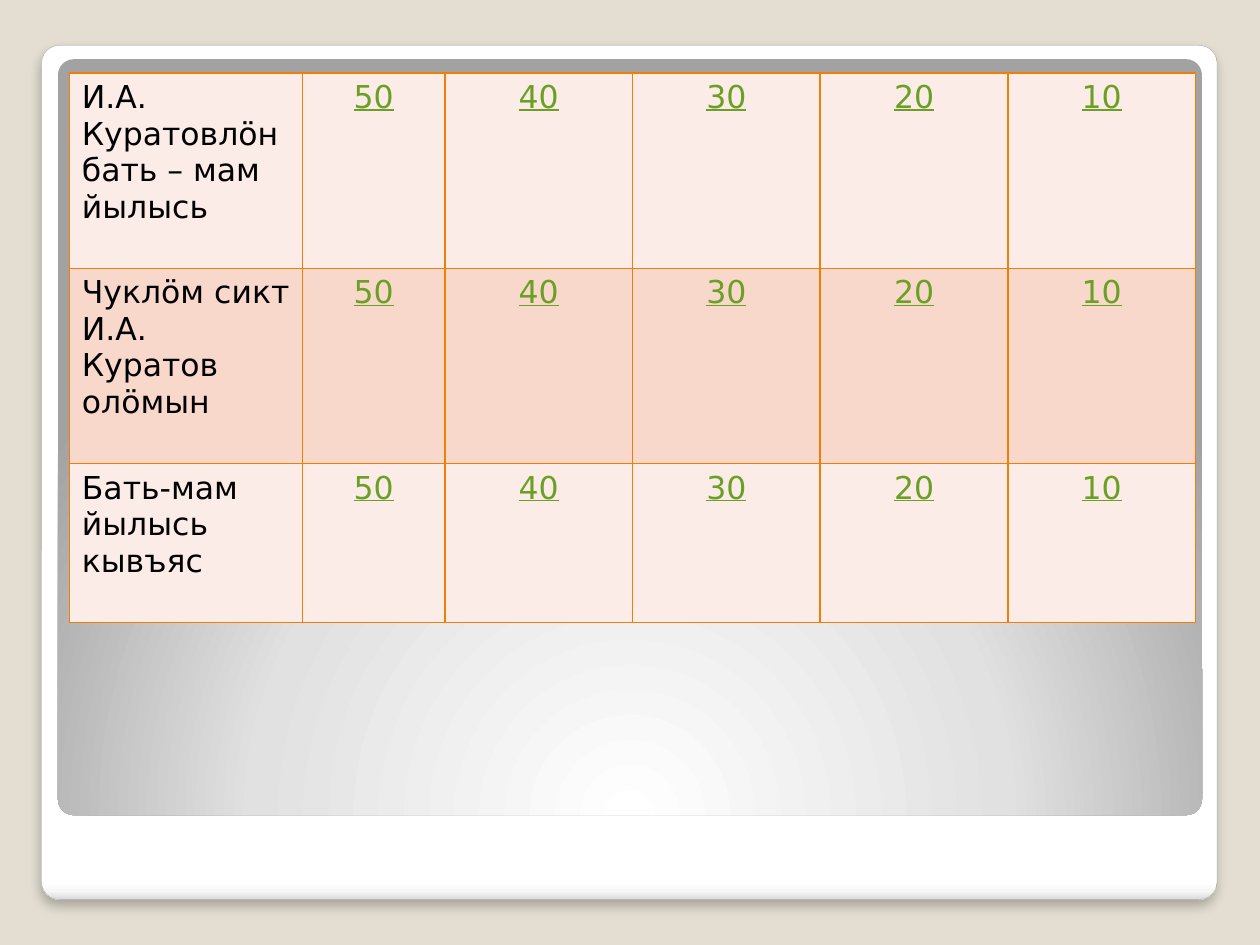
from lxml import etree
from pptx import Presentation
from pptx.dml.color import RGBColor
from pptx.enum.shapes import MSO_SHAPE
from pptx.enum.text import PP_ALIGN
from pptx.oxml import parse_xml
from pptx.oxml.ns import nsdecls, qn
from pptx.util import Inches, Pt

ROUNDED = MSO_SHAPE.ROUNDED_RECTANGLE
LEFT, CENTER = PP_ALIGN.LEFT, PP_ALIGN.CENTER

# Content
TOPICS = [
    "И.А. Куратовлöн бать – мам йылысь",
    "Чуклöм сикт И.А. Куратов олöмын",
    "Бать-мам йылысь кывъяс",
]
POINTS = ["50", "40", "30", "20", "10"]

# Look
FONT, FONT_SIZE = "DejaVu Sans", Pt(18)
SAND = RGBColor(0xE3, 0xDE, 0xD1)
EDGE_GREY = RGBColor(0xA4, 0xA4, 0xA4)
BLACK = RGBColor(0, 0, 0)
GREEN = RGBColor(0x6B, 0x9F, 0x25)
ORANGE = RGBColor(0xF0, 0x7F, 0x09)
BANDS = [RGBColor(0xFC, 0xEC, 0xE7), RGBColor(0xF9, 0xD8, 0xCC)]
FRAME_STOPS = [(0, "FFFFFF"), (98, "FFFFFF"), (99, "F7F7F7"), (100, "DADADA")]
PANEL_STOPS = [(0, "FFFFFF"), (55, "E1E1E1"), (100, "A2A2A2")]
DOWNWARD = '<a:lin ang="5400000" scaled="0"/>'
FROM_BELOW = ('<a:path path="circle"><a:fillToRect l="50000" t="175000" '
              'r="50000" b="-75000"/></a:path>')

# Grid, in inches
TABLE_LEFT, TABLE_TOP = 0.55, 0.58
COLUMN_WIDTHS = [1.85, 1.13] + [1.49] * 4
ROW_HEIGHTS = [1.55, 1.55, 1.26]


def add_backdrop(slide, box, stops, direction):
    """Rounded rectangle filled with a gradient."""
    backdrop = slide.shapes.add_shape(ROUNDED, *map(Inches, box))
    backdrop.adjustments[0] = 0.021
    backdrop.shadow.inherit = False
    backdrop.line.fill.background()
    stop_xml = "".join(
        f'<a:gs pos="{share * 1000}"><a:srgbClr val="{color}"/></a:gs>'
        for share, color in stops)
    gradient = parse_xml(f'<a:gradFill {nsdecls("a")} rotWithShape="1">'
                         f'<a:gsLst>{stop_xml}</a:gsLst>{direction}</a:gradFill>')
    backdrop._element.spPr.find(qn("a:prstGeom")).addnext(gradient)
    return backdrop


def add_soft_shadow(shape):
    effects = shape._element.spPr.find(qn("a:effectLst"))
    effects.append(parse_xml(
        f'<a:outerShdw {nsdecls("a")} blurRad="{Pt(6)}" dist="{Pt(4)}" '
        'dir="5400000" rotWithShape="0"><a:srgbClr val="000000">'
        '<a:alpha val="25000"/></a:srgbClr></a:outerShdw>'))


def set_borders(cell):
    properties = cell._tc.get_or_add_tcPr()
    for position, side in enumerate(("a:lnL", "a:lnR", "a:lnT", "a:lnB")):
        border = etree.Element(qn(side), w=str(Pt(1)))
        fill = etree.SubElement(border, qn("a:solidFill"))
        etree.SubElement(fill, qn("a:srgbClr"), val=str(ORANGE))
        properties.insert(position, border)


def fill_cell(cell, text, band, is_topic):
    cell.fill.solid()
    cell.fill.fore_color.rgb = band
    set_borders(cell)
    cell.text = text
    paragraph = cell.text_frame.paragraphs[0]
    paragraph.alignment = LEFT if is_topic else CENTER
    # Run fonts take precedence over the table style
    font = paragraph.runs[0].font
    font.name, font.size, font.bold = FONT, FONT_SIZE, False
    font.color.rgb = BLACK if is_topic else GREEN
    font.underline = not is_topic


def main():
    prs = Presentation()
    prs.slide_width, prs.slide_height = Inches(10), Inches(7.5)
    slide = prs.slides.add_slide(prs.slide_layouts[6])
    slide.background.fill.solid()
    slide.background.fill.fore_color.rgb = SAND

    # White frame and grey panel
    frame = add_backdrop(slide, (0.33, 0.36, 9.33, 6.78), FRAME_STOPS, DOWNWARD)
    frame.line.color.rgb = EDGE_GREY
    frame.line.width = Pt(0.16)
    add_soft_shadow(frame)
    add_backdrop(slide, (0.46, 0.47, 9.08, 6), PANEL_STOPS, FROM_BELOW)

    # Quiz board
    board = slide.shapes.add_table(
        len(TOPICS), len(POINTS) + 1, Inches(TABLE_LEFT), Inches(TABLE_TOP),
        Inches(sum(COLUMN_WIDTHS)), Inches(sum(ROW_HEIGHTS))).table
    for column, width in zip(board.columns, COLUMN_WIDTHS):
        column.width = Inches(width)
    for r, (topic, height) in enumerate(zip(TOPICS, ROW_HEIGHTS)):
        board.rows[r].height = Inches(height)
        for c, text in enumerate([topic] + POINTS):
            fill_cell(board.cell(r, c), text, BANDS[r % 2], c == 0)

    prs.save("out.pptx")


if __name__ == "__main__":
    main()
